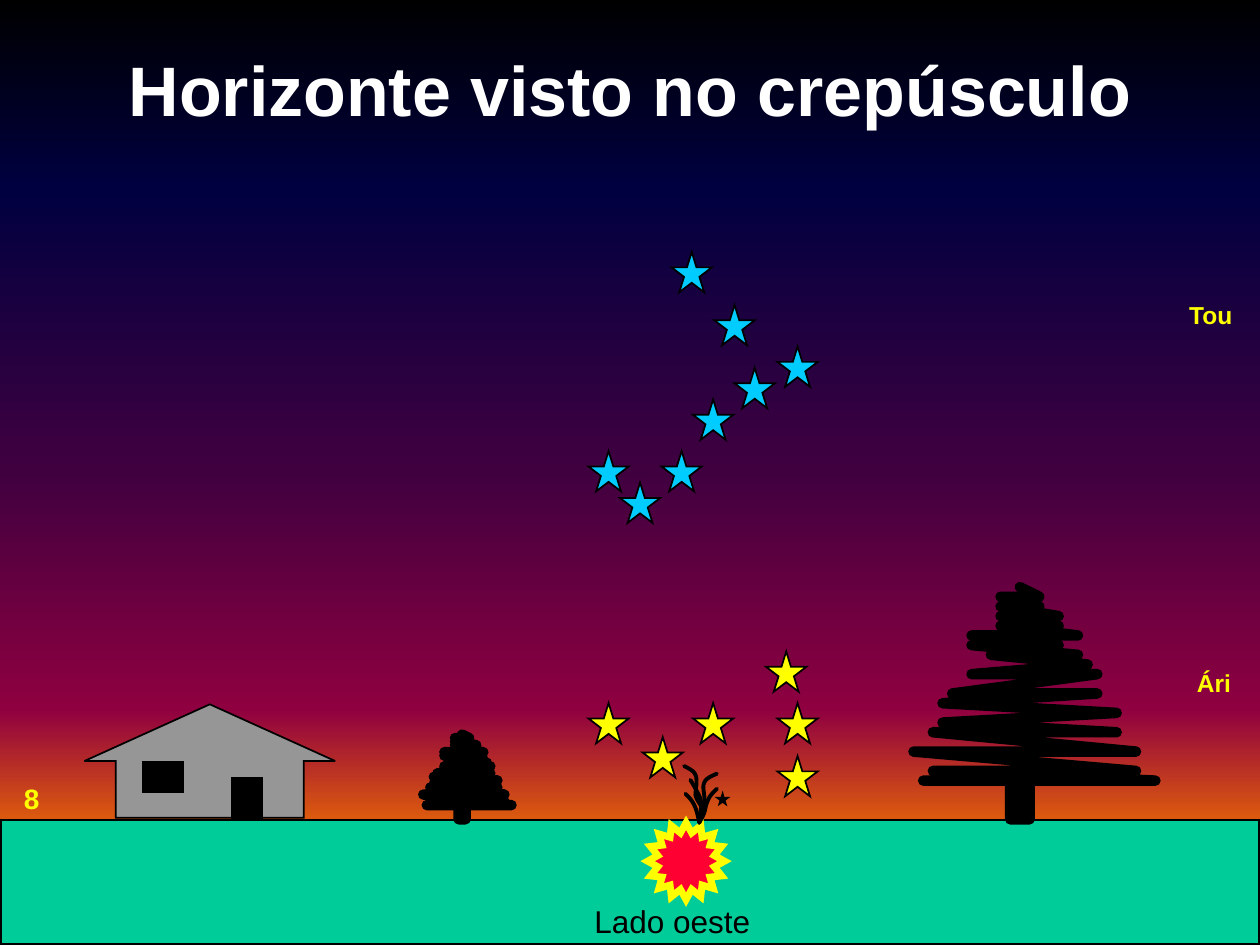
import pptx
import pptx.util
import pptx.dml.color
import pptx.enum.shapes
import pptx.enum.text
import pptx.oxml
import pptx.oxml.ns

Inches, Pt = pptx.util.Inches, pptx.util.Pt
RGB = pptx.dml.color.RGBColor.from_string
SHAPE = pptx.enum.shapes.MSO_SHAPE
ALIGN = pptx.enum.text.PP_ALIGN
ANCHOR = pptx.enum.text.MSO_ANCHOR
AUTO = pptx.enum.text.MSO_AUTO_SIZE

THEME = {
    "font": "Arial",
    "title": 40, "label": 18, "number": 16, "sign": 14,
    "white": "FFFFFF", "black": "000000", "yellow": "FFFF00", "blue": "00CCFF",
    "ground": "00CC99", "sun": "FF0033", "house": "969696",
    "sky": [(0, "000000"), (20, "000040"), (50, "400040"),
            (75, "8F0040"), (90, "F27300"), (100, "FFBF00")],
}

TITLE = "Horizonte visto no crepúsculo"
LABELS = [
    ("8", (0.09, 6.15, 0.32, 0.37), "number", "yellow", True),
    ("Tou", (9.33, 2.33, 0.56, 0.33), "sign", "yellow", True),
    ("Ári", (9.4, 5.25, 0.47, 0.33), "sign", "yellow", True),
    ("Lado oeste", (4.61, 7.11, 1.45, 0.4), "label", "black", False),
]
STAR_SIZE = 0.32
CONSTELLATIONS = {
    "blue": [(5.33, 2), (5.67, 2.42), (6.17, 2.75), (5.83, 2.92),
             (5.5, 3.17), (5.25, 3.58), (4.92, 3.83), (4.67, 3.58)],
    "yellow": [(6.08, 5.17), (6.17, 5.58), (6.17, 6),
               (5.5, 5.58), (5.1, 5.85), (4.67, 5.58)],
}
HOUSE = [
    (SHAPE.UP_ARROW, (0.67, 5.59, 1.99, 0.9), "house", (0.75, 0.5)),
    (SHAPE.RECTANGLE, (1.84, 6.17, 0.24, 0.32), "black", ()),
    (SHAPE.RECTANGLE, (1.13, 6.05, 0.32, 0.24), "black", ()),
]
TREE_COLUMNS = 25
TREE_GRID = [
    (11, 0), (13, 1), (9, 1), (13, 2), (9, 2), (15, 3), (9, 3), (15, 4), (9, 4),
    (17, 5), (6, 5), (15, 6), (6, 6), (17, 7), (8, 7), (18, 8), (6, 9), (19, 9),
    (4, 11), (19, 11), (3, 12), (21, 13), (3, 14), (21, 15), (2, 15), (23, 17),
    (0, 17), (23, 19), (2, 19), (25, 20), (1, 20), (10, 20), (10, 24), (12, 24),
    (12, 20),
]
TRUNK = (10, 20, 2, 4)
TREES = [(7.25, 4.66, 1.92), (3.36, 5.83, 0.7)]
BUSH_STAR = (5.72, 6.33, 0.03, 0.03)
BUSH_CURVES = [
    [(5.44, 6.3), (5.47, 6.33), (5.49, 6.35), (5.51, 6.39),
     (5.53, 6.43), (5.54, 6.48), (5.55, 6.53)],
    [(5.48, 6.19), (5.51, 6.24), (5.54, 6.29), (5.56, 6.34),
     (5.57, 6.4), (5.56, 6.47), (5.55, 6.53)],
    [(5.69, 6.26), (5.66, 6.29), (5.63, 6.32), (5.62, 6.35), (5.6, 6.39),
     (5.6, 6.42), (5.59, 6.45), (5.58, 6.48), (5.56, 6.51), (5.55, 6.53)],
    [(5.69, 6.14), (5.65, 6.16), (5.61, 6.17), (5.59, 6.21), (5.57, 6.25),
     (5.6, 6.32), (5.59, 6.36), (5.58, 6.4), (5.57, 6.43), (5.56, 6.45)],
    [(5.43, 6.08), (5.47, 6.1), (5.51, 6.12), (5.52, 6.15), (5.54, 6.19),
     (5.52, 6.27), (5.52, 6.31), (5.53, 6.35), (5.55, 6.37), (5.56, 6.39)],
]


def set_line(sp, color, width, join):
    sp.shadow.inherit = False
    sp.line.color.rgb = RGB(THEME[color])
    sp.line.width = Pt(width)
    ln = sp.line._get_or_add_ln()
    if join == "round":
        ln.set("cap", "rnd")
    ln.append(pptx.oxml.parse_xml(
        f'<a:{join} {pptx.oxml.ns.nsdecls("a")}/>'))


def add_preset(shapes, kind, box, fill, line="black", width=1, adj=()):
    sp = shapes.add_shape(kind, *map(Inches, box))
    for i, value in enumerate(adj):
        sp.adjustments[i] = value
    sp.fill.solid()
    sp.fill.fore_color.rgb = RGB(THEME[fill])
    set_line(sp, line, width, "miter")


def add_stroke(shapes, points, width):
    pts = [(Inches(x), Inches(y)) for x, y in points]
    builder = shapes.build_freeform(*pts[0])
    builder.add_line_segments(pts[1:], close=False)
    sp = builder.convert_to_shape()
    sp.fill.background()
    set_line(sp, "black", width, "round")


def sample_curve(points, steps=8):
    result = [points[0]]
    for i in range(0, len(points) - 1, 3):
        for n in range(1, steps + 1):
            t = n / steps
            weights = ((1 - t) ** 3, 3 * t * (1 - t) ** 2, 3 * t * t * (1 - t), t ** 3)
            result.append(tuple(
                sum(w * p[axis] for w, p in zip(weights, points[i:i + 4]))
                for axis in (0, 1)))
    return result


def format_text(tf, text, size, color, bold):
    tf.text = text
    p = tf.paragraphs[0]
    p.alignment = ALIGN.CENTER
    font = p.runs[0].font
    font.name, font.size, font.bold = THEME["font"], Pt(THEME[size]), bold
    font.color.rgb = RGB(THEME[color])


def paint_sky(s):
    fill = s.background.fill
    fill.gradient()
    fill.gradient_angle = 270
    stops = s.element.xpath(".//a:gsLst")[0]
    for gs in list(stops):
        stops.remove(gs)
    for pos, color in THEME["sky"]:
        stops.append(pptx.oxml.parse_xml(
            f'<a:gs {pptx.oxml.ns.nsdecls("a")} pos="{pos * 1000}">'
            f'<a:srgbClr val="{color}"/></a:gs>'))


def add_tree(s, left, top, width):
    unit = width / TREE_COLUMNS
    shapes = s.shapes.add_group_shape().shapes
    add_stroke(shapes, [(left + x * unit, top + y * unit) for x, y in TREE_GRID], 6)
    x, y, w, h = (n * unit for n in TRUNK)
    add_preset(shapes, SHAPE.RECTANGLE, (left + x, top + y, w, h), "black")


def main():
    prs = pptx.Presentation()
    prs.slide_width, prs.slide_height = Inches(10), Inches(7.5)
    s = prs.slides.add_slide(prs.slide_layouts[5])
    paint_sky(s)

    title = s.shapes.title
    title.left, title.top, title.width, title.height = map(Inches, (0, 0.08, 10, 1.25))
    title.text_frame.vertical_anchor = ANCHOR.MIDDLE
    title.text_frame.auto_size = AUTO.NONE
    format_text(title.text_frame, TITLE, "title", "white", True)

    add_preset(s.shapes, SHAPE.RECTANGLE, (0.01, 6.51, 9.98, 0.98), "ground")
    add_preset(s.shapes, SHAPE.STAR_16_POINT, (5.14, 6.53, 0.61, 0.61), "sun",
               "yellow", 4, (0.375,))
    for tree in TREES:
        add_tree(s, *tree)
    for kind, box, fill, adj in HOUSE:
        add_preset(s.shapes, kind, box, fill, adj=adj)
    for color, stars in CONSTELLATIONS.items():
        for x, y in stars:
            add_preset(s.shapes, SHAPE.STAR_5_POINT, (x, y, STAR_SIZE, STAR_SIZE), color)

    bush = s.shapes.add_group_shape().shapes
    add_preset(bush, SHAPE.STAR_5_POINT, BUSH_STAR, "yellow", width=2.25)
    for curve in BUSH_CURVES:
        add_stroke(bush, sample_curve(curve), 2.25)

    for text, box, size, color, bold in LABELS:
        tf = s.shapes.add_textbox(*map(Inches, box)).text_frame
        tf.word_wrap = False
        tf.auto_size = AUTO.SHAPE_TO_FIT_TEXT
        format_text(tf, text, size, color, bold)

    prs.save("out.pptx")


if __name__ == "__main__":
    main()
